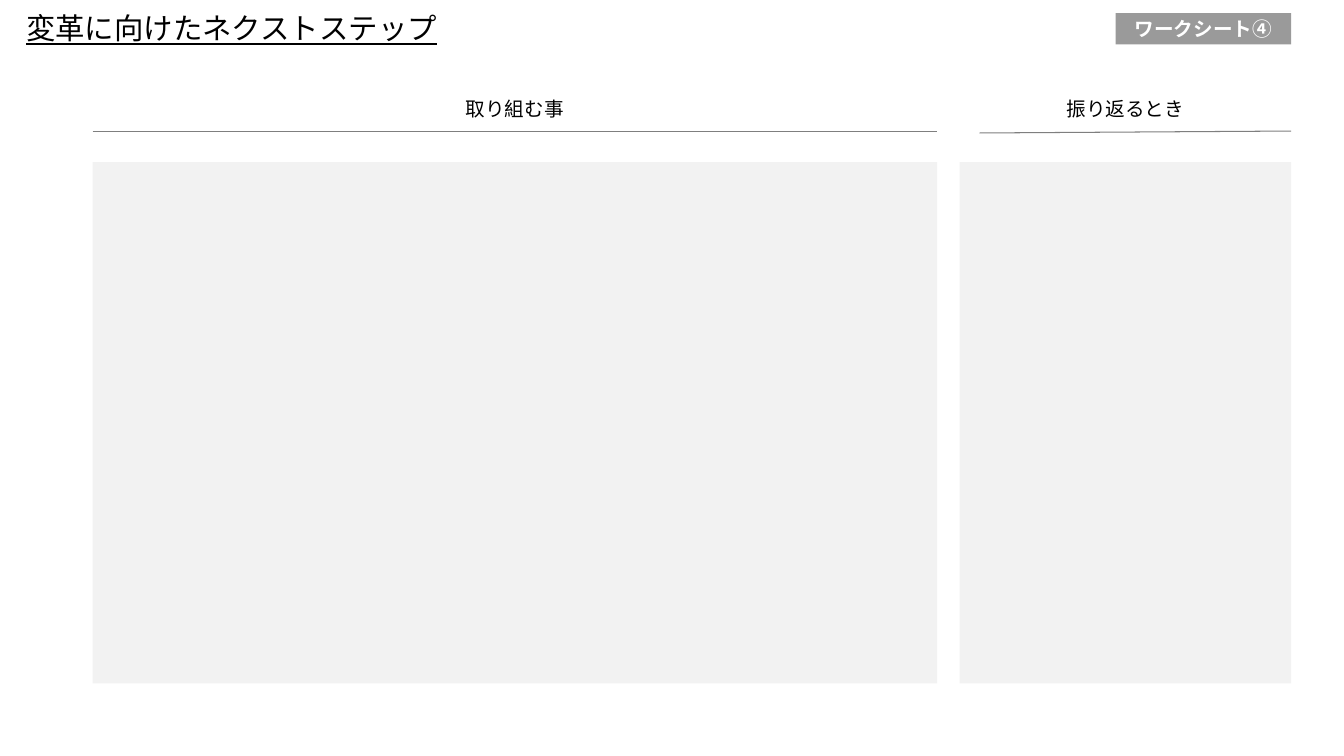
from lxml import etree
from pptx import Presentation
from pptx.dml.color import RGBColor
from pptx.enum.shapes import MSO_CONNECTOR, MSO_SHAPE
from pptx.enum.text import MSO_ANCHOR, MSO_AUTO_SIZE, PP_ALIGN
from pptx.oxml.ns import qn
from pptx.util import Pt

RECT, LINE = MSO_SHAPE.RECTANGLE, MSO_CONNECTOR.STRAIGHT
LEFT, CENTER = PP_ALIGN.LEFT, PP_ALIGN.CENTER
TOP, MIDDLE = MSO_ANCHOR.TOP, MSO_ANCHOR.MIDDLE
TITLE_ONLY = 5


def color(value):
    return RGBColor.from_string(value)


def write(tf, text, font, size=14, fill="000000", bold=False, underline=False,
          align=CENTER, anchor=TOP, pad=7.2):
    tf.word_wrap = True
    tf.auto_size = MSO_AUTO_SIZE.NONE
    tf.vertical_anchor = anchor
    tf.margin_left = tf.margin_right = Pt(7.2)
    tf.margin_top = tf.margin_bottom = Pt(pad)
    p = tf.paragraphs[0]
    p.alignment = align
    r = p.add_run()
    r.text = text
    r.font.name, r.font.size = font, Pt(size)
    r.font.bold, r.font.underline = bold, underline
    r.font.color.rgb = color(fill)
    # East Asian text needs its own typeface entry
    latin = r.font._element.find(qn("a:latin"))
    ea = etree.Element(qn("a:ea"), typeface=font)
    latin.addnext(ea)


class Worksheet:
    font = "Noto Sans CJK JP"
    panel, tag, rule = "F2F2F2", "9A9A9A", "7F7F7F"

    def __init__(self, prs):
        self.s = prs.slides.add_slide(prs.slide_layouts[TITLE_ONLY])

    def title(self, text, x, y, w, h):
        sp = self.s.shapes.title
        sp.left, sp.top, sp.width, sp.height = map(Pt, (x, y, w, h))
        write(sp.text_frame, text, self.font, size=21, underline=True, align=LEFT)

    def box(self, x, y, w, h, fill):
        sp = self.s.shapes.add_shape(RECT, Pt(x), Pt(y), Pt(w), Pt(h))
        sp.shadow.inherit = False
        sp.fill.solid()
        sp.fill.fore_color.rgb = color(fill)
        sp.line.fill.background()
        return sp

    def badge(self, text, x, y, w, h):
        sp = self.box(x, y, w, h, self.tag)
        write(sp.text_frame, text, self.font, fill="FFFFFF", bold=True,
              anchor=MIDDLE, pad=3.6)

    def label(self, text, x, y, w, h):
        sp = self.s.shapes.add_textbox(Pt(x), Pt(y), Pt(w), Pt(h))
        write(sp.text_frame, text, self.font)

    def line(self, x1, y1, x2, y2):
        sp = self.s.shapes.add_connector(LINE, Pt(x1), Pt(y1), Pt(x2), Pt(y2))
        sp.line.color.rgb = color(self.rule)
        sp.line.width = Pt(0.75)
        etree.SubElement(sp._element.spPr, qn("a:effectLst"))


def main():
    prs = Presentation()
    prs.slide_width, prs.slide_height = Pt(960), Pt(540)
    sheet = Worksheet(prs)

    # Title and worksheet number
    sheet.title("変革に向けたネクストステップ", 11.5, 0, 408, 40.3)
    sheet.badge("ワークシート④", 797, 9.4, 125.3, 22.3)

    # Columns: heading, left edge, width, line inset, line start height
    columns = [("取り組む事", 66.2, 603.2, 0, 93.6),
               ("振り返るとき", 685.4, 236.9, 14.4, 95)]
    for heading, x, w, inset, start_y in columns:
        sheet.box(x, 115.9, w, 372.2, sheet.panel)
        sheet.label(heading, x, 61.9, w, 31.7)
        sheet.line(x + inset, start_y, x + w, 93.6)

    prs.save("out.pptx")


if __name__ == "__main__":
    main()
